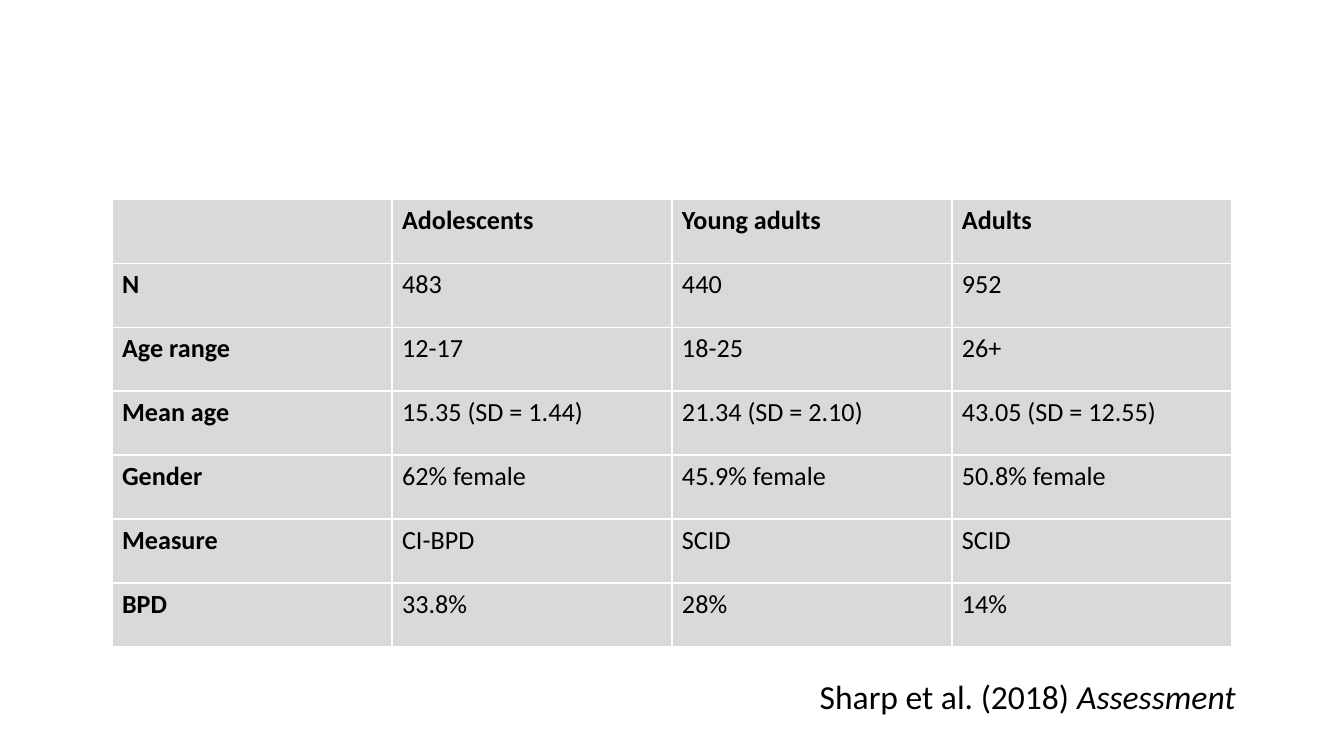
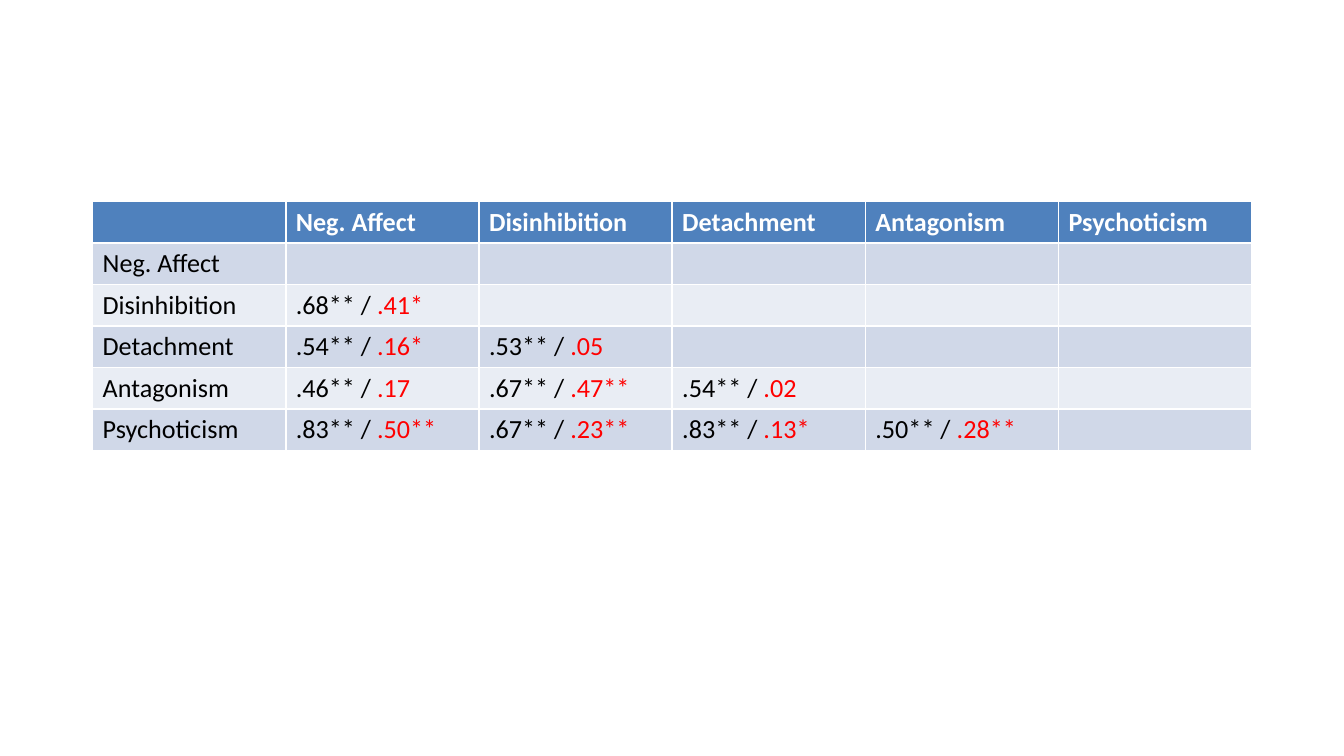
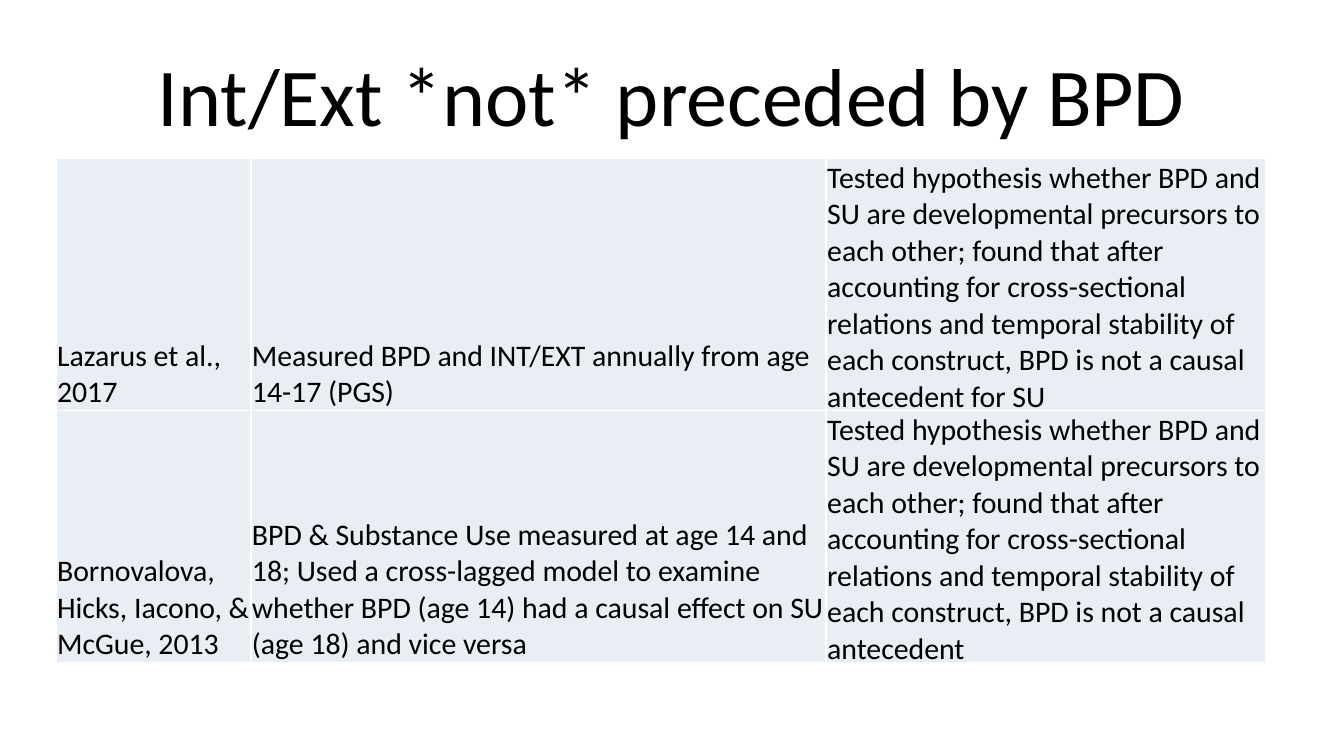
"""Build three slides of study tables on borderline personality disorder."""
import pptx
import pptx.dml.color
import pptx.enum.text
import pptx.util
from lxml import etree

Pt = pptx.util.Pt
ANCHOR = pptx.enum.text.MSO_ANCHOR
ALIGN = pptx.enum.text.PP_ALIGN

FONT = "Calibri"
COLORS = {
    "text": "000000",
    "header_text": "FFFFFF",
    "second_value": "FF0000",
    "grey": "D9D9D9",
    "header": "4F81BD",
    "band_dark": "D0D8E8",
    "band_light": "E9EDF4",
}

SAMPLES = [
    ("", "Adolescents", "Young adults", "Adults"),
    ("N", "483", "440", "952"),
    ("Age range", "12-17", "18-25", "26+"),
    ("Mean age", "15.35 (SD = 1.44)", "21.34 (SD = 2.10)", "43.05 (SD = 12.55)"),
    ("Gender", "62% female", "45.9% female", "50.8% female"),
    ("Measure", "CI-BPD", "SCID", "SCID"),
    ("BPD", "33.8%", "28%", "14%"),
]
CITATION = ("Sharp et al. (2018) ", "Assessment")

TRAITS = ["Neg. Affect", "Disinhibition", "Detachment", "Antagonism", "Psychoticism"]
CORRELATIONS = [
    [],
    [(".68**", ".41*")],
    [(".54**", ".16*"), (".53**", ".05")],
    [(".46**", ".17"), (".67**", ".47**"), (".54**", ".02")],
    [(".83**", ".50**"), (".67**", ".23**"), (".83**", ".13*"), (".50**", ".28**")],
]

STUDY_TITLE = "Int/Ext *not* preceded by BPD"
FINDING = (
    "Tested hypothesis whether BPD and SU are developmental precursors to each other; "
    "found that after accounting for cross-sectional relations and temporal stability "
    "of each construct, BPD is not a causal antecedent"
)
STUDIES = [
    (
        "Lazarus et al., 2017",
        "Measured BPD and INT/EXT annually from age 14-17 (PGS)",
        FINDING + " for SU",
    ),
    (
        "Bornovalova, Hicks, Iacono, & McGue, 2013",
        "BPD & Substance Use measured at age 14 and 18; Used a cross-lagged model to "
        "examine whether BPD (age 14) had a causal effect on SU (age 18) and vice versa",
        FINDING,
    ),
]


def color(name):
    return pptx.dml.color.RGBColor.from_string(COLORS[name])


def write(paragraph, runs, size, bold=False):
    """Fill a paragraph with (text, colour name) runs."""
    paragraph.font.name = FONT
    paragraph.font.size = Pt(size)
    paragraph.font.bold = bold
    for text, color_name in runs:
        run = paragraph.add_run()
        run.text = text
        run.font.color.rgb = color(color_name)


def add_slide(presentation):
    return presentation.slides.add_slide(presentation.slide_layouts[6])


def add_text(slide, box, runs, size):
    shape = slide.shapes.add_textbox(*map(Pt, box))
    paragraph = shape.text_frame.paragraphs[0]
    write(paragraph, runs, size)
    return shape.text_frame, paragraph


def add_grid(slide, left, top, widths, row_height, rows, style, size=14,
             insets=(5.4, 2.7, 5.4, 2.7), anchor=ANCHOR.TOP, header=True):
    """Add a table; style(row, column) gives fill, text colour and bold."""
    frame = slide.shapes.add_table(
        len(rows), len(widths), Pt(left), Pt(top), Pt(sum(widths)), Pt(row_height * len(rows))
    )
    table = frame.table
    table.first_row = header
    table.horz_banding = False
    for column, width in zip(table.columns, widths):
        column.width = Pt(width)
    for row_index, values in enumerate(rows):
        table.rows[row_index].height = Pt(row_height)
        for column_index, value in enumerate(values):
            fill, text_color, bold = style(row_index, column_index)
            cell = table.cell(row_index, column_index)
            cell.fill.solid()
            cell.fill.fore_color.rgb = color(fill)
            cell.margin_left, cell.margin_top, cell.margin_right, cell.margin_bottom = map(Pt, insets)
            cell.vertical_anchor = anchor
            paragraph = cell.text_frame.paragraphs[0]
            if isinstance(value, tuple):
                runs = [(value[0] + " / ", text_color), (value[1], "second_value")]
            else:
                runs = [(value, text_color)] if value else []
            write(paragraph, runs, size, bold)
            if not runs:
                end = etree.SubElement(paragraph._p, pptx.oxml.ns.qn("a:endParaRPr"))
                end.set("sz", str(size * 100))


def sample_style(row, column):
    return "grey", "text", row == 0 or column == 0


def correlation_style(row, column):
    if row == 0:
        return "header", "header_text", True
    return ("band_dark" if row % 2 else "band_light"), "text", False


def study_style(row, column):
    return "band_light", "text", False


def build_samples(presentation):
    slide = add_slide(presentation)
    add_grid(slide, 60, 106.8, [150] * 4, 34.28, SAMPLES, sample_style)
    runs = [(text, "text") for text in CITATION]
    text_frame, paragraph = add_text(slide, (432, 358.5, 245.5, 29), runs, 18)
    text_frame.word_wrap = False
    paragraph.runs[1].font.italic = True


def build_correlations(presentation):
    slide = add_slide(presentation)
    rows = [["", *TRAITS]]
    for trait, values in zip(TRAITS, CORRELATIONS):
        rows.append([trait, *values, *[""] * (len(TRAITS) - len(values))])
    add_grid(slide, 49.6, 108, [103.5] * len(rows[0]), 22.2, rows, correlation_style)


def build_studies(presentation):
    slide = add_slide(presentation)
    text_frame, paragraph = add_text(slide, (36, 16.5, 648, 67.5), [(STUDY_TITLE, "text")], 44)
    text_frame.word_wrap = True
    text_frame.vertical_anchor = ANCHOR.MIDDLE
    paragraph.alignment = ALIGN.CENTER
    add_grid(slide, 30, 85, [104.4, 308.2, 235.4], 135, STUDIES, study_style, size=16,
             insets=(0.6, 0.6, 0.6, 0), anchor=ANCHOR.BOTTOM, header=False)


def main():
    presentation = pptx.Presentation()
    presentation.slide_width = Pt(720)
    presentation.slide_height = Pt(405)
    build_samples(presentation)
    build_correlations(presentation)
    build_studies(presentation)
    presentation.save("out.pptx")


if __name__ == "__main__":
    main()
